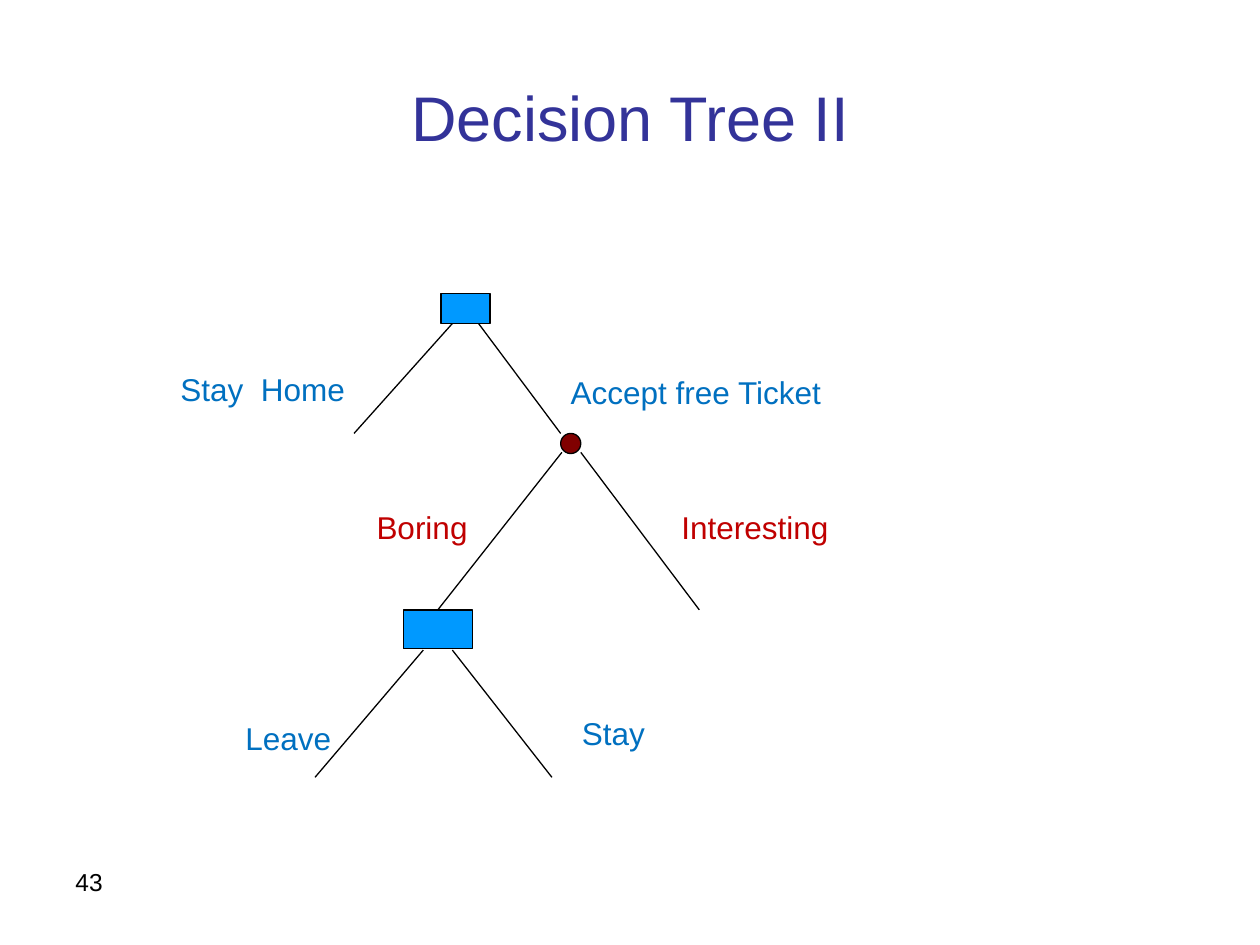
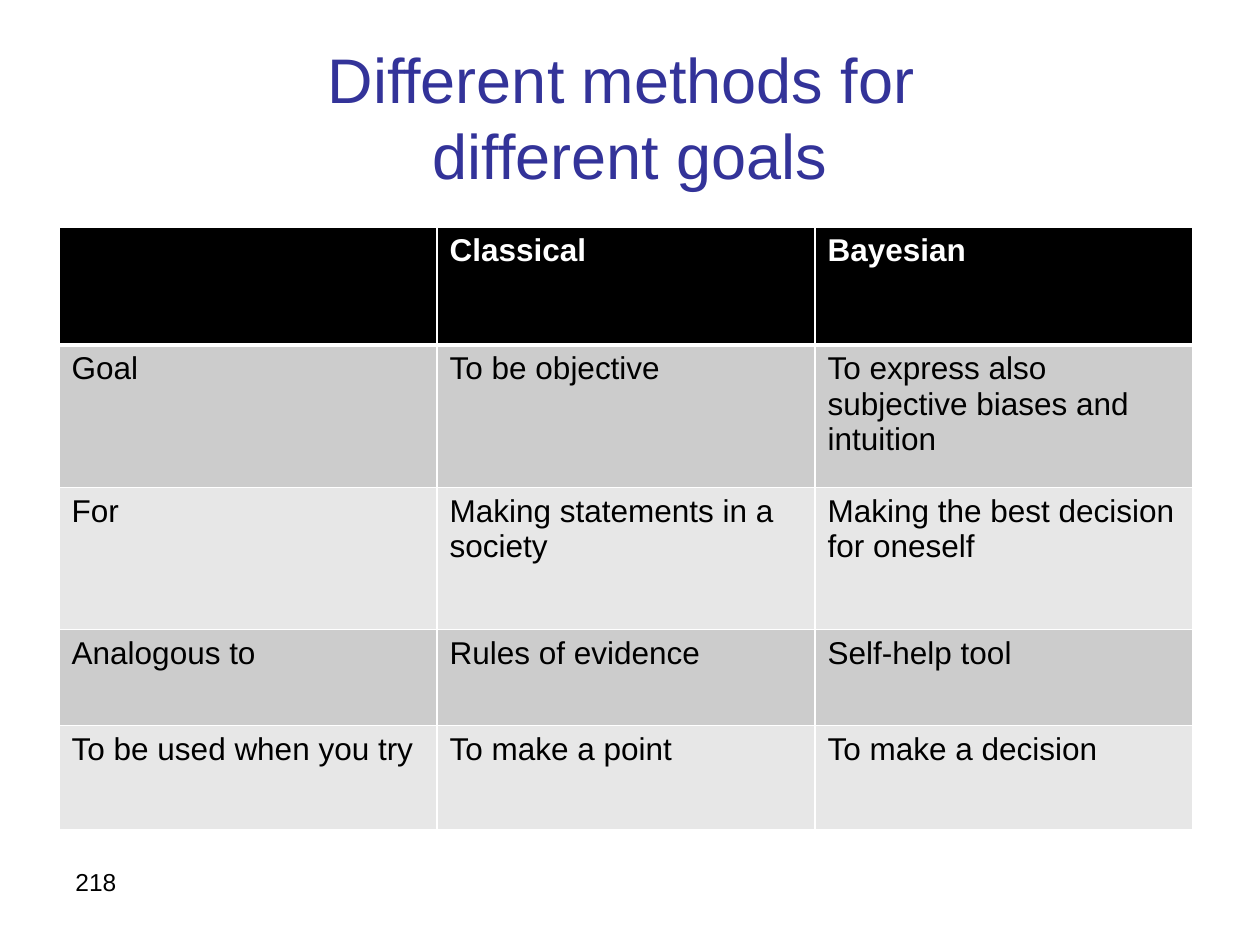
from lxml import etree
from pptx import Presentation
from pptx.dml.color import RGBColor
from pptx.enum.shapes import MSO_CONNECTOR, MSO_SHAPE
from pptx.enum.text import MSO_ANCHOR, PP_ALIGN
from pptx.oxml.ns import qn
from pptx.util import Pt

RECTANGLE, OVAL = MSO_SHAPE.RECTANGLE, MSO_SHAPE.OVAL
STRAIGHT = MSO_CONNECTOR.STRAIGHT
LEFT, CENTER = PP_ALIGN.LEFT, PP_ALIGN.CENTER
TOP, MIDDLE = MSO_ANCHOR.TOP, MSO_ANCHOR.MIDDLE

FONT = "Arial"
BLACK = RGBColor(0x00, 0x00, 0x00)
WHITE = RGBColor(0xFF, 0xFF, 0xFF)
TITLE_BLUE = RGBColor(0x33, 0x33, 0x99)
DECISION_FILL = RGBColor(0x00, 0x99, 0xFF)
CHANCE_FILL = RGBColor(0x80, 0x00, 0x00)
DECISION_TEXT = RGBColor(0x00, 0x70, 0xC0)
CHANCE_TEXT = RGBColor(0xC0, 0x00, 0x00)
DARK_BAND = RGBColor(0xCC, 0xCC, 0xCC)
LIGHT_BAND = RGBColor(0xE7, 0xE7, 0xE7)

TITLE_BOX = (36, 21.6, 648, 90)
NUMBER_BOX = (36, 491.8, 168, 37.4)
TREE_ORIGIN = (96, 167.8)
TABLE_BOX = (33.8, 129.6, 648)
LABEL_HEIGHT = 28.8
LINE_WIDTH = 0.75

BRANCH_LABELS = [
    ("Stay  Home", 0, 40.3, 122.4, DECISION_TEXT),
    ("Accept free Ticket", 223, 41.7, 161.3, DECISION_TEXT),
    ("Boring", 112.1, 118.8, 118.1, CHANCE_TEXT),
    ("Interesting", 286.3, 118.8, 123.8, CHANCE_TEXT),
    ("Leave", 37.2, 239.7, 69.8, DECISION_TEXT),
    ("Stay", 229.4, 236.8, 68.4, DECISION_TEXT),
]

METHODS = [
    ("", "Classical", "Bayesian"),
    ("Goal", "To be objective", "To express also subjective biases and intuition"),
    ("For", "Making statements in a society", "Making the best decision for oneself"),
    ("Analogous to", "Rules of evidence", "Self-help tool"),
    ("To be used when you try", "To make a point", "To make a decision"),
]
ROW_HEIGHTS = [67.5, 81.4, 81.4, 54.7, 59.8]


def style_para(para, size, color, align=LEFT, bold=False):
    para.alignment = align
    font = para.font
    font.name, font.size, font.bold = FONT, Pt(size), bold
    font.color.rgb = color


def add_text(page, box, text, size, color, align=LEFT, anchor=TOP, wrap=True):
    frame = page.shapes.add_textbox(*map(Pt, box)).text_frame
    frame.word_wrap = wrap
    frame.vertical_anchor = anchor
    frame.text = text
    para = frame.paragraphs[0]
    para.text = text
    style_para(para, size, color, align)


def add_page(deck, title, number):
    page = deck.slides.add_slide(deck.slide_layouts[6])
    add_text(page, NUMBER_BOX, number, 14, BLACK)
    add_text(page, TITLE_BOX, title, 36, TITLE_BLUE, CENTER, MIDDLE)
    return page


def add_node(page, kind, box, fill):
    node = page.shapes.add_shape(kind, *map(Pt, box))
    node.shadow.inherit = False
    node.fill.solid()
    node.fill.fore_color.rgb = fill
    node.line.color.rgb = BLACK
    node.line.width = Pt(LINE_WIDTH)
    return node


def add_branch(page, start, end):
    branch = page.shapes.add_connector(STRAIGHT, *map(Pt, start + end))
    branch.line.color.rgb = BLACK
    branch.line.width = Pt(LINE_WIDTH)
    etree.SubElement(branch._element.spPr, qn("a:effectLst"))
    return branch


def draw_tree(page, origin):
    left, top = origin

    def at(x, y):
        return left + x, top + y

    add_branch(page, at(167.5, 11.5), at(106.3, 79.9))
    add_branch(page, at(173.3, 11.5), at(224.4, 79.9))
    add_node(page, RECTANGLE, at(156, 0) + (28.1, 17.3), DECISION_FILL)

    boring = add_branch(page, at(225.1, 90.7), at(154.2, 180.7))
    add_branch(page, at(235.9, 90.7), at(303.6, 180.7))
    add_node(page, OVAL, at(224.4, 79.9) + (11.5, 11.5), CHANCE_FILL)

    second = add_node(page, RECTANGLE, at(134.4, 180.7) + (39.6, 22.3), DECISION_FILL)
    boring.end_connect(second, 0)
    add_branch(page, at(145.9, 203.7), at(84, 276.4))
    add_branch(page, at(162.5, 203.7), at(219.4, 276.4))

    for text, x, y, width, color in BRANCH_LABELS:
        add_text(page, at(x, y) + (width, LABEL_HEIGHT), text, 18, color, wrap=False)


def add_border(cell, side, width):
    line = etree.SubElement(cell._tc.get_or_add_tcPr(), qn(f"a:ln{side}"), w=str(Pt(width)))
    fill = etree.SubElement(line, qn("a:solidFill"))
    etree.SubElement(fill, qn("a:srgbClr"), val=str(WHITE))


def fill_cell(cell, text, row_index):
    header = row_index == 0
    widths = {"L": 1, "R": 1, "T": 3 if row_index == 1 else 1, "B": 3 if header else 1}
    for side, width in widths.items():
        add_border(cell, side, width)
    cell.fill.solid()
    band = DARK_BAND if row_index % 2 else LIGHT_BAND
    cell.fill.fore_color.rgb = BLACK if header else band
    cell.text = text
    style_para(cell.text_frame.paragraphs[0], 18, WHITE if header else BLACK, bold=header)


def draw_methods_table(page, box):
    left, top, width = box
    frame = page.shapes.add_table(
        len(METHODS), len(METHODS[0]), Pt(left), Pt(top), Pt(width), Pt(sum(ROW_HEIGHTS))
    )
    table = frame.table
    for row_index, (texts, height) in enumerate(zip(METHODS, ROW_HEIGHTS)):
        table.rows[row_index].height = Pt(height)
        for column_index, text in enumerate(texts):
            fill_cell(table.cell(row_index, column_index), text, row_index)


def main():
    deck = Presentation()
    deck.slide_width, deck.slide_height = Pt(720), Pt(540)
    draw_tree(add_page(deck, "Decision Tree II", "43"), TREE_ORIGIN)
    methods_page = add_page(deck, "Different methods for \vdifferent goals", "218")
    draw_methods_table(methods_page, TABLE_BOX)
    deck.save("out.pptx")


if __name__ == "__main__":
    main()
